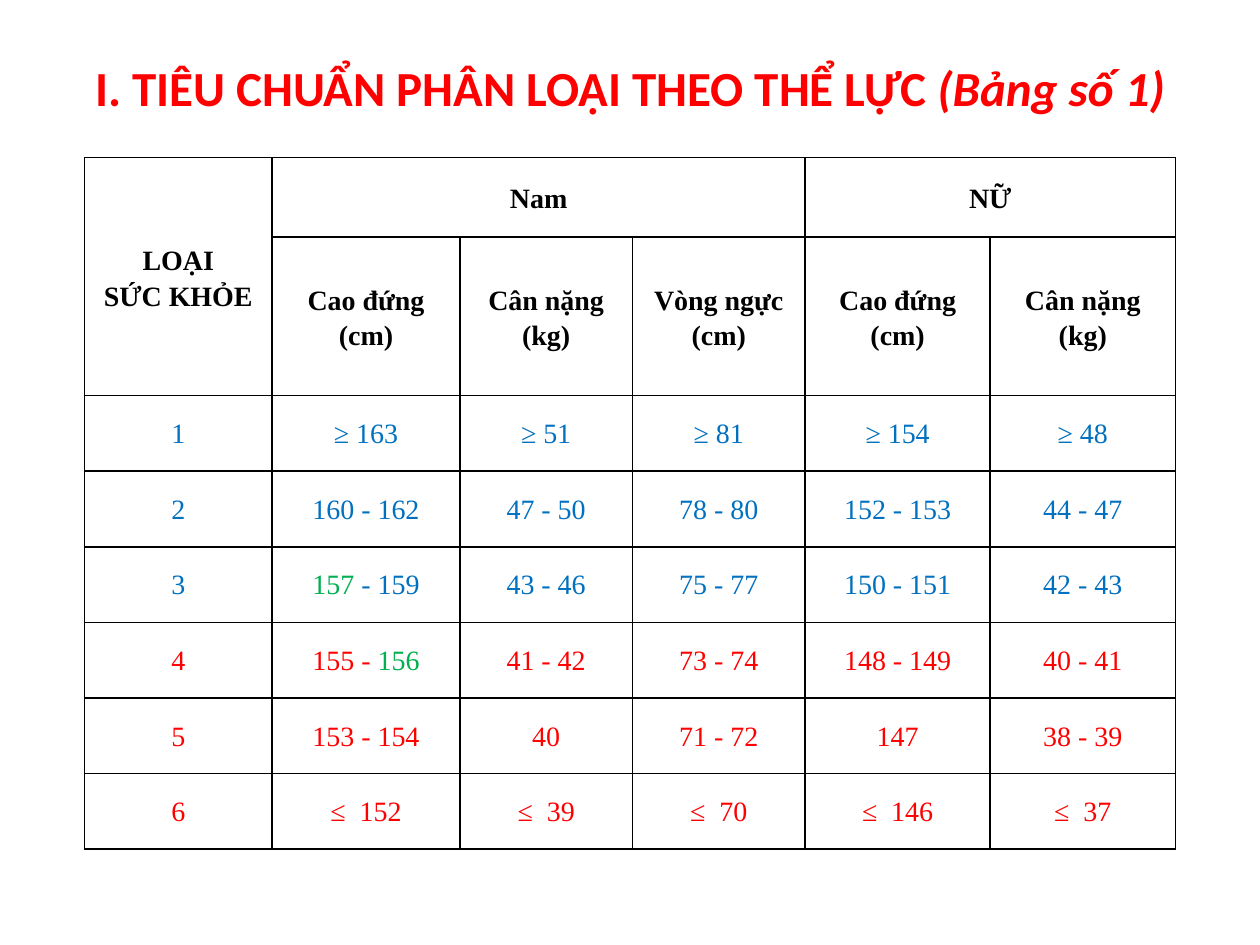
from dataclasses import dataclass

from lxml import etree
from pptx import Presentation
from pptx import util as u
from pptx.dml.color import RGBColor
from pptx.enum import text as t
from pptx.oxml.ns import qn


@dataclass(frozen=True)
class Theme:
    black: str = "000000"
    red: str = "FF0000"
    blue: str = "0070C0"
    green: str = "00B050"
    head: str = "Calibri"
    body: str = "Times New Roman"
    big: int = 28
    small: int = 16
    rule: int = 1


TH = Theme()
WIDTHS = [1.49, 1.49, 1.37, 1.37, 1.47, 1.47]
HEIGHTS = [0.63, 1.26] + [0.6] * 6
MERGES = [((0, 0), (1, 0)), ((0, 1), (0, 3)), ((0, 4), (0, 5))]
HEADS = [
    ["LOẠI\nSỨC KHỎE", "Nam", "", "", "NỮ", ""],
    ["", "Cao đứng (cm)", "Cân nặng (kg)", "Vòng ngực (cm)",
     "Cao đứng (cm)", "Cân nặng (kg)"],
]
# A tuple holds (text, colour) runs; a colour of None means that of the row.
FIT = [
    ["1", "≥ 163", "≥ 51", "≥ 81", "≥ 154", "≥ 48"],
    ["2", "160 - 162", "47 - 50", "78 - 80", "152 - 153", "44 - 47"],
    ["3", (("157", TH.green), (" - 159", None)), "43 - 46", "75 - 77",
     "150 - 151", "42 - 43"],
]
UNFIT = [
    ["4", (("155 - ", None), ("156", TH.green)), "41 - 42", "73 - 74",
     "148 - 149", "40 - 41"],
    ["5", "153 - 154", "40", "71 - 72", "147", "38 - 39"],
    ["6", "≤  152", "≤  39", "≤  70", "≤  146", "≤  37"],
]


def assign(obj, **values):
    for name, value in values.items():
        setattr(obj, name, value)


def add_text(para, words, color, **font):
    """Add words as runs, with a line break at each newline."""
    for i, line in enumerate(words.split("\n")):
        if i:
            para.add_line_break()
        run = para.add_run()
        run.text = line
        assign(run.font, **font)
        run.font.color.rgb = RGBColor.from_string(color)


def add_title(slide):
    title = slide.shapes.title
    assign(title, left=u.Inches(0.5), top=u.Inches(0.3),
           width=u.Inches(9), height=u.Inches(1.25))
    frame = title.text_frame
    assign(frame, word_wrap=True, auto_size=t.MSO_AUTO_SIZE.NONE,
           vertical_anchor=t.MSO_ANCHOR.MIDDLE, margin_bottom=u.Inches(0.52))
    para = frame.paragraphs[0]
    para.alignment = t.PP_ALIGN.CENTER
    font = dict(name=TH.head, size=u.Pt(TH.big), bold=True)
    add_text(para, "I. TIÊU CHUẨN PHÂN LOẠI THEO THỂ LỰC ", TH.red, **font)
    add_text(para, "(Bảng số 1)", TH.red, italic=True, **font)


def add_rules(cell):
    """Draw the four borders, which must come before the fill."""
    props = cell._tc.get_or_add_tcPr()
    for i, side in enumerate("LRTB"):
        line = etree.Element(qn(f"a:ln{side}"), w=str(u.Pt(TH.rule)))
        fill = etree.SubElement(line, qn("a:solidFill"))
        etree.SubElement(fill, qn("a:srgbClr"), val=TH.black)
        props.insert(i, line)


def fill_cell(cell, content, color, bold, space):
    cell.fill.background()
    add_rules(cell)
    assign(cell, vertical_anchor=t.MSO_ANCHOR.MIDDLE,
           margin_left=u.Inches(0.07), margin_right=u.Inches(0.07),
           margin_top=0, margin_bottom=0)
    if not content:
        return
    para = cell.text_frame.paragraphs[0]
    assign(para, alignment=t.PP_ALIGN.CENTER, line_spacing=space,
           space_before=u.Pt(6), space_after=u.Pt(6))
    runs = ((content, None),) if isinstance(content, str) else content
    for words, tint in runs:
        add_text(para, words, tint or color, name=TH.body,
                 size=u.Pt(TH.small), bold=bold)


def add_grid(slide):
    table = slide.shapes.add_table(
        len(HEIGHTS), len(WIDTHS), u.Inches(0.67), u.Inches(1.25),
        u.Inches(sum(WIDTHS)), u.Inches(sum(HEIGHTS))).table
    assign(table, first_row=False, horz_banding=False)
    for col, width in zip(table.columns, WIDTHS):
        col.width = u.Inches(width)
    for row, height in zip(table.rows, HEIGHTS):
        row.height = u.Inches(height)
    for start, end in MERGES:
        table.cell(*start).merge(table.cell(*end))
    groups = [(HEADS, TH.black, True, 1.15), (FIT, TH.blue, False, 1.05),
              (UNFIT, TH.red, False, 1.05)]
    rows = iter(table.rows)
    for group, *look in groups:
        for data in group:
            for cell, content in zip(next(rows).cells, data):
                fill_cell(cell, content, *look)


def main():
    deck = Presentation()
    assign(deck, slide_width=u.Inches(10), slide_height=u.Inches(7.5))
    slide = deck.slides.add_slide(deck.slide_layouts[5])
    add_title(slide)
    add_grid(slide)
    deck.save("out.pptx")


if __name__ == "__main__":
    main()
